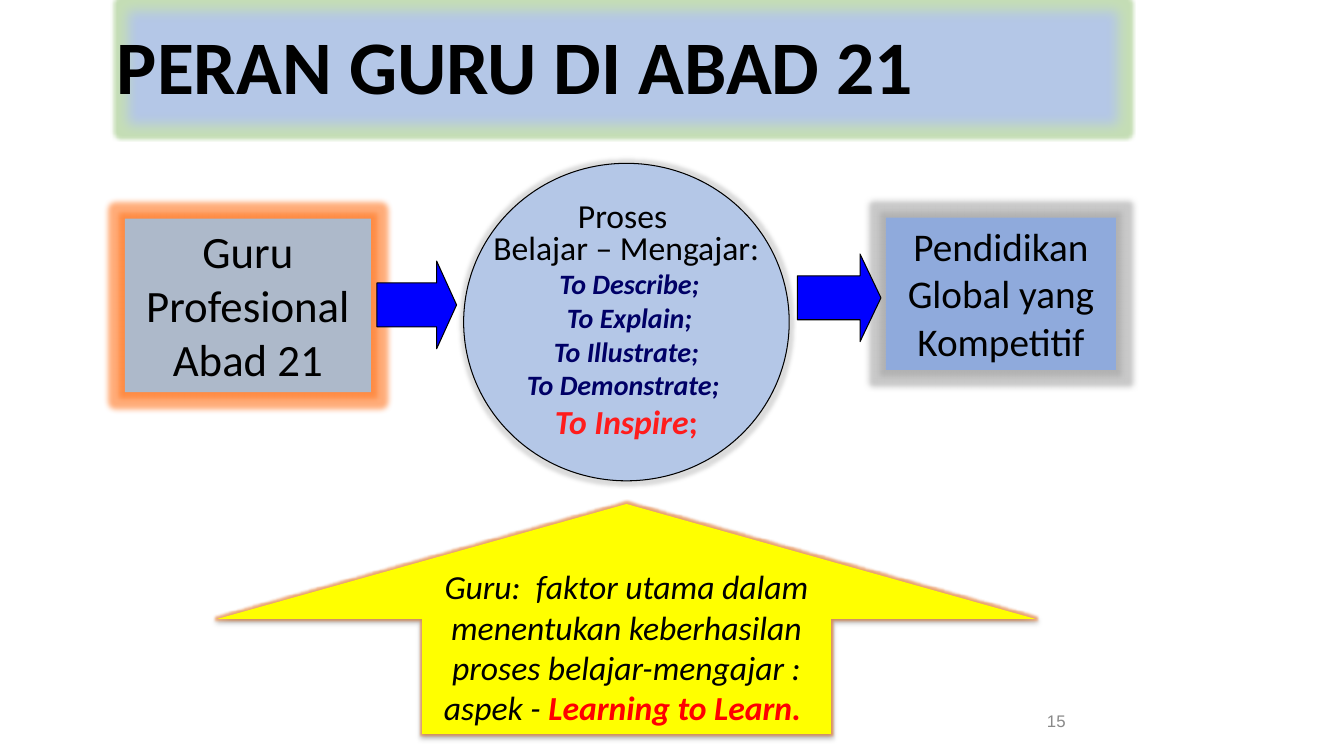
from dataclasses import dataclass
from typing import Optional

from lxml import etree
from pptx import Presentation
from pptx import util as u
from pptx.dml import color
from pptx.enum import shapes, text
from pptx.oxml import ns

COLS, ROWS = 160, 90
WIDTH, HEIGHT = u.Inches(13.33), u.Inches(7.5)
COLORS = {
    "black": "000000", "red": "FF0000", "bright red": "FF1C1C",
    "navy": "000066", "blue": "0000FF", "sky": "B4C7E7",
    "steel": "ADB9CA", "cornflower": "8FAADC", "yellow": "FFFF00",
    "number": "898989", "green": "70AD47", "orange": "FF7722",
    "gray": "A5A5A5", "rust": "ED7D31",
}
KIND = shapes.MSO_SHAPE
ALIGN = text.PP_ALIGN
ANCHOR = text.MSO_ANCHOR


@dataclass(frozen=True)
class Area:
    col: float
    row: float
    cols: float
    rows: float


@dataclass(frozen=True)
class Glow:
    color: str
    radius: float
    opacity: int = 40


@dataclass(frozen=True)
class Block:
    kind: int
    area: Area
    fill: str
    outlined: bool = False
    glow: Optional[Glow] = None
    shadow: bool = False
    caption: str = ""
    size: float = 24
    italic: bool = False
    adjust: tuple[float, ...] = ()


@dataclass(frozen=True)
class Line:
    caption: str
    size: float = 20
    color: str = "navy"
    bold: bool = True
    hanging: bool = False


TITLE_AREA = Area(13.92, 0, 120.48, 16.08)
NUMBER_AREA = Area(100.08, 83.4, 27.96, 4.8)
CIRCLE = Block(KIND.OVAL, Area(55.2, 19.44, 38.76, 37.8), "sky",
               outlined=True, glow=Glow("gray", 5))
BASE = Block(KIND.UP_ARROW, Area(25.92, 60, 97.32, 27.36), "yellow",
             glow=Glow("rust", 3, 60), shadow=True, italic=True,
             caption="Guru:  faktor utama dalam menentukan keberhasilan "
                     "proses belajar-mengajar : aspek - ")
BOXES = [
    Block(KIND.RECTANGLE, Area(14.88, 26.04, 29.28, 20.64), "steel",
          glow=Glow("orange", 8, 60), caption="Guru Profesional Abad 21", size=32),
    Block(KIND.RECTANGLE, Area(105.48, 25.92, 27.36, 18.12), "cornflower",
          glow=Glow("gray", 8, 60), caption="Pendidikan Global yang Kompetitif", size=28),
]
ARROWS = [
    Block(KIND.RIGHT_ARROW, area, "blue", outlined=True, adjust=(0.5, 0.25))
    for area in (Area(44.88, 31.08, 9.48, 10.44), Area(94.92, 30.24, 9.96, 10.44))
]
STEPS = [
    Line("Proses ", 24, "black", False, True),
    Line("Belajar – Mengajar:", 24, "black", False, True),
    Line(" To Describe;"),
    Line(" To Explain;"),
    Line("To Illustrate;"),
    Line("To Demonstrate; "),
    Line("To Inspire", 24, "bright red"),
]


def rgb(name: str) -> color.RGBColor:
    return color.RGBColor.from_string(COLORS[name])


def bounds(area: Area) -> tuple[int, int, int, int]:
    return (round(area.col * WIDTH / COLS), round(area.row * HEIGHT / ROWS),
            round(area.cols * WIDTH / COLS), round(area.rows * HEIGHT / ROWS))


def add_text(p, caption: str, *, size: float = 24, color: str = "black",
             font: str = "Calibri", bold: bool = False, italic: bool = False) -> None:
    r = p.add_run()
    r.text = caption
    r.font.name = font
    r.font.size = u.Pt(size)
    r.font.bold = bold
    r.font.italic = italic
    r.font.color.rgb = rgb(color)


def add_effects(sp, glow: Optional[Glow] = None, shadow: bool = False,
                soft_edge: float = 0) -> None:
    sp.shadow.inherit = False
    effects = sp._element.spPr.find(ns.qn("a:effectLst"))

    def effect(tag: str, tint: str = "", opacity: int = 100, **attrs: str) -> None:
        node = etree.SubElement(effects, ns.qn(tag), attrs)
        if tint:
            clr = etree.SubElement(node, ns.qn("a:srgbClr"), val=COLORS[tint])
            etree.SubElement(clr, ns.qn("a:alpha"), val=str(opacity * 1000))

    if glow:
        effect("a:glow", glow.color, glow.opacity, rad=str(u.Pt(glow.radius)))
    if shadow:
        effect("a:outerShdw", "black", 35, blurRad=str(u.Pt(3.1)),
               dist=str(u.Pt(1.8)), dir="5400000", rotWithShape="0")
    if soft_edge:
        effect("a:softEdge", rad=str(u.Pt(soft_edge)))


def add_block(s, block: Block):
    sp = s.shapes.add_shape(block.kind, *bounds(block.area))
    for i, value in enumerate(block.adjust):
        sp.adjustments[i] = value
    sp.fill.solid()
    sp.fill.fore_color.rgb = rgb(block.fill)
    if block.outlined:
        sp.line.color.rgb = rgb("black")
        sp.line.width = u.Pt(0.75)
    else:
        sp.line.fill.background()
    add_effects(sp, block.glow, block.shadow)
    tf = sp.text_frame
    tf.word_wrap = True
    tf.vertical_anchor = ANCHOR.TOP
    p = tf.paragraphs[0]
    p.alignment = ALIGN.CENTER
    if block.caption:
        add_text(p, block.caption, size=block.size, italic=block.italic)
    return sp


def add_title(s) -> None:
    sp = s.shapes.title
    sp.left, sp.top, sp.width, sp.height = bounds(TITLE_AREA)
    sp.fill.solid()
    sp.fill.fore_color.rgb = rgb("sky")
    add_effects(sp, Glow("green", 5), soft_edge=8.86)
    tf = sp.text_frame
    tf.word_wrap = True
    tf.auto_size = text.MSO_AUTO_SIZE.NONE
    tf.vertical_anchor = ANCHOR.MIDDLE
    tf.margin_left = tf.margin_right = tf.margin_bottom = 0
    tf.margin_top = u.Inches(0.05)
    p = tf.paragraphs[0]
    p.alignment = ALIGN.LEFT
    p.line_spacing = 0.9
    add_text(p, "PERAN GURU DI ABAD 21", size=54, bold=True)


def add_process(s) -> None:
    tf = add_block(s, CIRCLE).text_frame
    tf.word_wrap = False
    tf.vertical_anchor = ANCHOR.MIDDLE
    for i, line in enumerate(STEPS):
        p = tf.add_paragraph() if i else tf.paragraphs[0]
        p.alignment = ALIGN.CENTER
        if line.hanging:
            p.line_spacing = 0.8
            indent = u.Inches(0.38)
            pPr = p._p.get_or_add_pPr()
            pPr.set("marL", str(indent))
            pPr.set("indent", str(-indent))
        add_text(p, line.caption, size=line.size, color=line.color,
                 bold=line.bold, italic=line.bold)
    add_text(p, ";", color="bright red", bold=True)


def add_number(s) -> None:
    tf = s.shapes.add_textbox(*bounds(NUMBER_AREA)).text_frame
    tf.word_wrap = True
    tf.vertical_anchor = ANCHOR.MIDDLE
    p = tf.paragraphs[0]
    p.alignment = ALIGN.RIGHT
    add_text(p, "15", size=12, color="number", font="Arial")


def main() -> None:
    prs = Presentation()
    prs.slide_width, prs.slide_height = WIDTH, HEIGHT
    s = prs.slides.add_slide(prs.slide_layouts[5])
    add_number(s)
    add_title(s)
    for box in BOXES:
        add_block(s, box)
    add_process(s)
    for arrow in ARROWS:
        add_block(s, arrow)
    p = add_block(s, BASE).text_frame.paragraphs[0]
    add_text(p, "Learning to Learn. ", color="red", bold=True, italic=True)
    prs.save("out.pptx")


if __name__ == "__main__":
    main()
